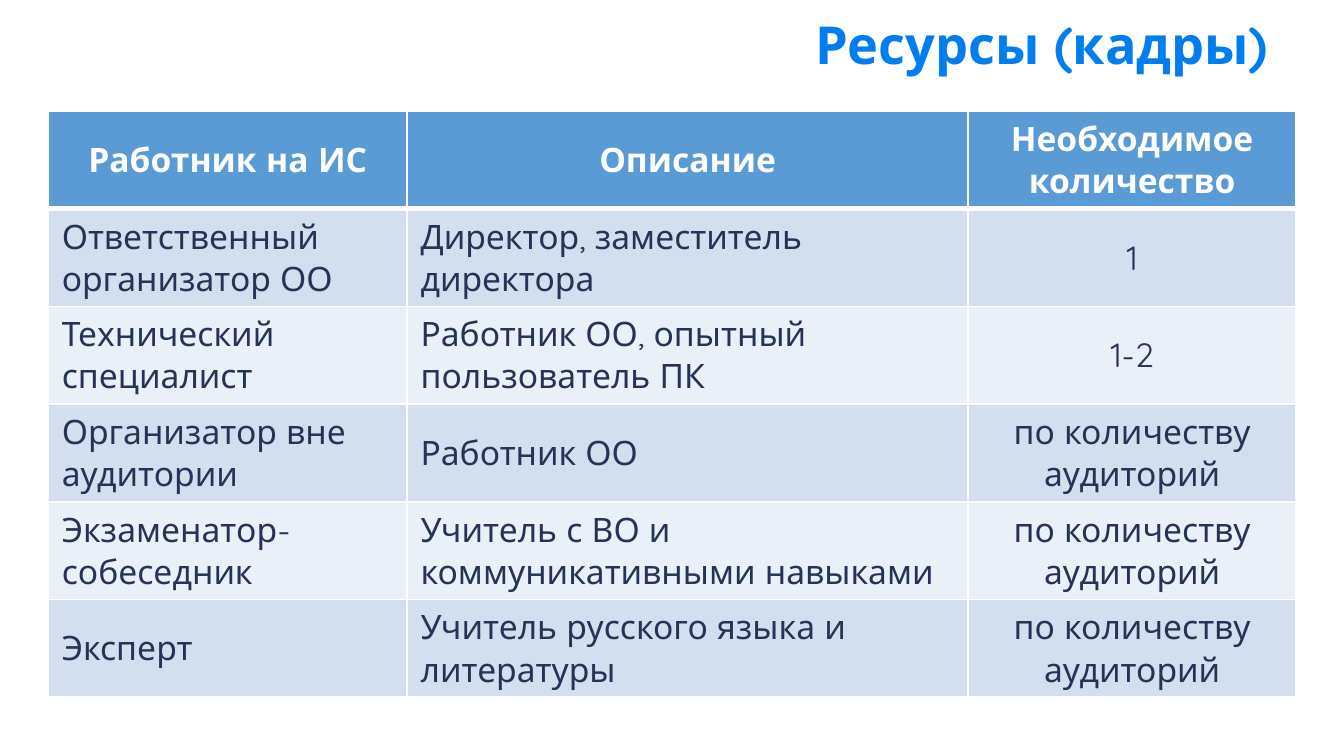
from lxml import etree
from pptx import Presentation
from pptx.dml.color import RGBColor
from pptx.enum.text import MSO_ANCHOR, MSO_AUTO_SIZE, PP_ALIGN
from pptx.oxml.ns import qn
from pptx.util import Inches, Pt

LEFT, CENTER, RIGHT = PP_ALIGN.LEFT, PP_ALIGN.CENTER, PP_ALIGN.RIGHT
MIDDLE = MSO_ANCHOR.MIDDLE
NO_AUTOFIT = MSO_AUTO_SIZE.NONE

SLIDE_WIDTH = Inches(10)
SLIDE_HEIGHT = SLIDE_WIDTH * 9 // 16
GRID_COLUMNS, GRID_ROWS = 100, 56.25
TITLE_ONLY = 5

HEADER = ["Работник на ИС", "Описание", "Необходимое количество"]
STAFF = [
    ["Ответственный организатор ОО", "Директор, заместитель директора", "1"],
    ["Технический специалист", "Работник ОО, опытный пользователь ПК", "1-2"],
    ["Организатор вне аудитории", "Работник ОО", "по количеству аудиторий"],
    ["Экзаменатор-собеседник", "Учитель с ВО и коммуникативными навыками",
     "по количеству аудиторий"],
    ["Эксперт", "Учитель русского языка и литературы", "по количеству аудиторий"],
]


def color(value):
    return RGBColor.from_string(value)


class SlideBuilder:
    font_name = "Quicksand"
    title_color = "007DEE"
    text_color = "253356"
    white = "FFFFFF"
    header_fill = "5B9BD5"
    band_fills = ["D3DFEE", "EAF0F7"]

    def __init__(self, presentation):
        self.slide = presentation.slides.add_slide(
            presentation.slide_layouts[TITLE_ONLY])
        self.column = presentation.slide_width / GRID_COLUMNS
        self.row = presentation.slide_height / GRID_ROWS

    def box(self, left, top, width, height):
        return (round(left * self.column), round(top * self.row),
                round(width * self.column), round(height * self.row))

    def style(self, paragraph, size, text_color, bold, alignment):
        paragraph.alignment = alignment
        font = paragraph.font
        font.name, font.size, font.bold = self.font_name, Pt(size), bold
        font.color.rgb = color(text_color)

    def title(self, text, *area):
        shape = self.slide.shapes.title
        shape.left, shape.top, shape.width, shape.height = self.box(*area)
        frame = shape.text_frame
        frame.text = text
        frame.auto_size = NO_AUTOFIT
        frame.vertical_anchor = MIDDLE
        paragraph = frame.paragraphs[0]
        paragraph.line_spacing = 0.9
        self.style(paragraph, 28, self.title_color, True, RIGHT)

    def borders(self, cell, widths):
        properties = cell._tc.get_or_add_tcPr()
        for index, (side, width) in enumerate(widths.items()):
            line = etree.Element(qn(f"a:ln{side}"), w=str(Pt(width)))
            fill = etree.SubElement(line, qn("a:solidFill"))
            etree.SubElement(fill, qn("a:srgbClr"), val=self.white)
            properties.insert(index, line)

    def cell(self, cell, text, fill, text_color, bold, alignment):
        cell.text = text
        cell.vertical_anchor = MIDDLE
        cell.fill.solid()
        cell.fill.fore_color.rgb = color(fill)
        self.style(cell.text_frame.paragraphs[0], 18, text_color, bold, alignment)

    def table(self, header, records, column_widths, alignments, left, top, height):
        rows = [header] + records
        area = self.box(left, top, sum(column_widths), height)
        table = self.slide.shapes.add_table(len(rows), len(header), *area).table
        for column, width in zip(table.columns, column_widths):
            column.width = round(width * self.column)
        for row_index, texts in enumerate(rows):
            is_header = row_index == 0
            fill = self.header_fill if is_header else self.band_fills[(row_index - 1) % 2]
            text_color = self.white if is_header else self.text_color
            widths = {"L": 1, "R": 1, "T": 3 if row_index == 1 else 1,
                      "B": 3 if is_header else 1}
            for column_index, text in enumerate(texts):
                cell = table.cell(row_index, column_index)
                alignment = CENTER if is_header else alignments[column_index]
                self.cell(cell, text, fill, text_color, is_header, alignment)
                self.borders(cell, widths)


def main():
    presentation = Presentation()
    presentation.slide_width = SLIDE_WIDTH
    presentation.slide_height = SLIDE_HEIGHT
    builder = SlideBuilder(presentation)
    builder.title("Ресурсы (кадры)", 9, 0, 86.3, 7.1)
    builder.table(HEADER, STAFF, [26.7, 41.75, 24.4], [LEFT, LEFT, CENTER],
                  3.6, 8.25, 42)
    presentation.save("out.pptx")


if __name__ == "__main__":
    main()
